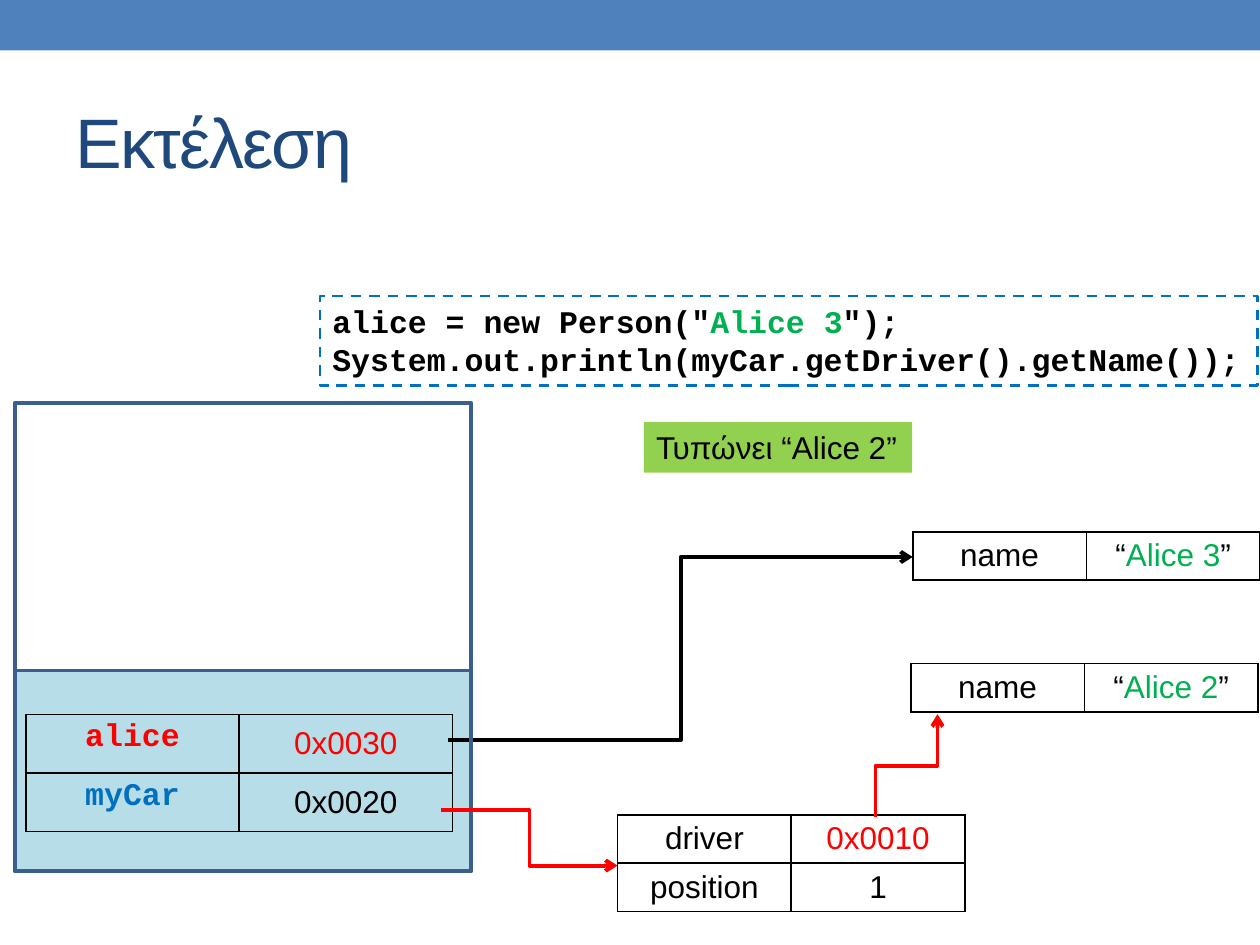
from dataclasses import dataclass

from lxml.etree import SubElement
from pptx import Presentation
from pptx.dml.color import RGBColor
from pptx.enum.dml import MSO_LINE
from pptx.enum.shapes import MSO_CONNECTOR, MSO_SHAPE
from pptx.enum.text import MSO_ANCHOR, MSO_AUTO_SIZE, PP_ALIGN
from pptx.oxml.ns import qn
from pptx.util import Cm, Pt

BLACK, RED, GREEN, BLUE = "000000", "FF0000", "00B050", "0070C0"
FRAME = "3A5F8C"
SANS, MONO = "Arial", "Courier New"


@dataclass(frozen=True)
class Span:
    text: str
    color: str = BLACK
    font: str = SANS
    size: float = 18


@dataclass(frozen=True)
class Cell:
    spans: tuple[Span, ...]
    anchor: MSO_ANCHOR = MSO_ANCHOR.TOP


@dataclass(frozen=True)
class Grid:
    left: float
    top: float
    column_width: float
    row_height: float
    rows: tuple[tuple[Cell, ...], ...]


@dataclass(frozen=True)
class Arrow:
    start: tuple[float, float]
    end: tuple[float, float]
    color: str
    leaves_vertically: bool = False


def rgb(color: str) -> RGBColor:
    return RGBColor.from_string(color)


def write_spans(para, spans: tuple[Span, ...]) -> None:
    for span in spans:
        run = para.add_run()
        run.text = span.text
        run.font.name = span.font
        run.font.size = Pt(span.size)
        run.font.bold = span.font == MONO
        run.font.color.rgb = rgb(span.color)


def add_rectangle(page, left: float, top: float, width: float, height: float,
                  fill: str | None = None, line: str | None = None):
    box = page.shapes.add_shape(MSO_SHAPE.RECTANGLE, Cm(left), Cm(top), Cm(width), Cm(height))
    box.shadow.inherit = False
    if fill:
        box.fill.solid()
        box.fill.fore_color.rgb = rgb(fill)
    else:
        box.fill.background()
    if line:
        box.line.color.rgb = rgb(line)
        box.line.width = Pt(2.08)
    else:
        box.line.fill.background()
    return box


def add_text_box(page, left: float, top: float, width: float, height: float,
                 lines: tuple[tuple[Span, ...], ...]):
    box = page.shapes.add_textbox(Cm(left), Cm(top), Cm(width), Cm(height))
    frame = box.text_frame
    frame.word_wrap = False
    frame.auto_size = MSO_AUTO_SIZE.SHAPE_TO_FIT_TEXT
    for index, spans in enumerate(lines):
        write_spans(frame.paragraphs[0] if index == 0 else frame.add_paragraph(), spans)
    return box


def add_borders(cell) -> None:
    properties = cell._tc.get_or_add_tcPr()
    for index, side in enumerate(("a:lnL", "a:lnR", "a:lnT", "a:lnB")):
        line = SubElement(properties, qn(side), w=str(Pt(1)))
        SubElement(SubElement(line, qn("a:solidFill")), qn("a:srgbClr"), val=BLACK)
        properties.insert(index, line)


def add_grid(page, grid: Grid) -> None:
    row_count, column_count = len(grid.rows), len(grid.rows[0])
    table = page.shapes.add_table(
        row_count, column_count, Cm(grid.left), Cm(grid.top),
        Cm(grid.column_width * column_count), Cm(grid.row_height * row_count)).table
    table.first_row = table.horz_banding = False
    for row_index, row in enumerate(grid.rows):
        table.rows[row_index].height = Cm(grid.row_height)
        for column_index, content in enumerate(row):
            cell = table.cell(row_index, column_index)
            cell.fill.background()
            cell.vertical_anchor = content.anchor
            para = cell.text_frame.paragraphs[0]
            para.alignment = PP_ALIGN.CENTER
            write_spans(para, content.spans)
            add_borders(cell)


def add_arrow(page, arrow: Arrow) -> None:
    """Draw an elbow arrow; one that leaves vertically is laid flat, then turned 90 degrees."""
    points = [arrow.start, arrow.end]
    if arrow.leaves_vertically:
        center_x = (arrow.start[0] + arrow.end[0]) / 2
        center_y = (arrow.start[1] + arrow.end[1]) / 2
        points = [(center_x + y - center_y, center_y - x + center_x) for x, y in points]
    connector = page.shapes.add_connector(
        MSO_CONNECTOR.ELBOW, *(Cm(value) for point in points for value in point))
    connector.line.color.rgb = rgb(arrow.color)
    connector.line.width = Pt(2.25)
    properties = connector._element.spPr
    if arrow.leaves_vertically:
        properties.find(qn("a:xfrm")).set("rot", "5400000")
    SubElement(properties.find(qn("a:ln")), qn("a:tailEnd"), type="arrow")
    SubElement(properties, qn("a:effectLst"))


def set_title(page, text: str) -> None:
    title = page.shapes.title
    title.left, title.top, title.width, title.height = Cm(1.27), Cm(1.47), Cm(22.86), Cm(2.74)
    title.text_frame.vertical_anchor = MSO_ANCHOR.MIDDLE
    para = title.text_frame.paragraphs[0]
    para.alignment = PP_ALIGN.LEFT
    write_spans(para, (Span(text, "1F497D", size=40),))
    para.runs[0].font._element.set("spc", "-100")


def plain(text: str, color: str = BLACK) -> Cell:
    return Cell((Span(text, color),))


def variable_row(name: str, name_color: str, address: str, address_color: str) -> tuple[Cell, ...]:
    return (Cell((Span(name, name_color, MONO),)),
            Cell((Span(address, address_color),), MSO_ANCHOR.MIDDLE))


def person_grid(left: float, top: float, name: str) -> Grid:
    quoted = Cell((Span("“"), Span(name, GREEN), Span("”")))
    return Grid(left, top, 3.5, 0.97, ((plain("name"), quoted),))


def main() -> None:
    deck = Presentation()
    deck.slide_width, deck.slide_height = Cm(25.4), Cm(19.05)
    page = deck.slides.add_slide(deck.slide_layouts[5])
    set_title(page, "Εκτέλεση")

    add_rectangle(page, 0, 0, 25.4, 1.02, fill="4F81BD")
    add_rectangle(page, 0.3, 13.52, 9.2, 4.04, fill="B7DEE8", line=FRAME)
    add_grid(page, Grid(0.52, 14.4, 4.3, 1.18, (
        variable_row("alice", RED, "0x0030", RED),
        variable_row("myCar", BLUE, "0x0020", BLACK))))
    add_arrow(page, Arrow((9.04, 14.92), (18.4, 11.23), BLACK))
    add_rectangle(page, 0.3, 8.12, 9.2, 9.44, line=FRAME)
    add_arrow(page, Arrow((8.9, 16.33), (12.45, 17.45), RED))
    add_grid(page, Grid(12.45, 16.43, 3.5, 0.97, (
        (plain("driver"), plain("0x0010", RED)),
        (plain("position"), plain("1")))))
    add_grid(page, person_grid(18.36, 13.38, "Alice 2"))
    add_arrow(page, Arrow((17.65, 16.48), (18.9, 14.4), RED, leaves_vertically=True))
    add_grid(page, person_grid(18.4, 10.72, "Alice 3"))

    output = add_text_box(page, 12.98, 8.51, 5.41, 1.02, ((Span("Τυπώνει “Alice 2”"),),))
    output.fill.solid()
    output.fill.fore_color.rgb = rgb("92D050")

    code = add_text_box(page, 6.45, 5.97, 18.9, 1.8, (
        (Span('alice = new Person("', font=MONO), Span("Alice 3", GREEN, MONO),
         Span('");', font=MONO)),
        (Span("System.out.println(myCar.getDriver().getName());", font=MONO),)))
    code.line.color.rgb = rgb(BLUE)
    code.line.width = Pt(1.5)
    code.line.dash_style = MSO_LINE.DASH

    deck.save("out.pptx")


if __name__ == "__main__":
    main()
